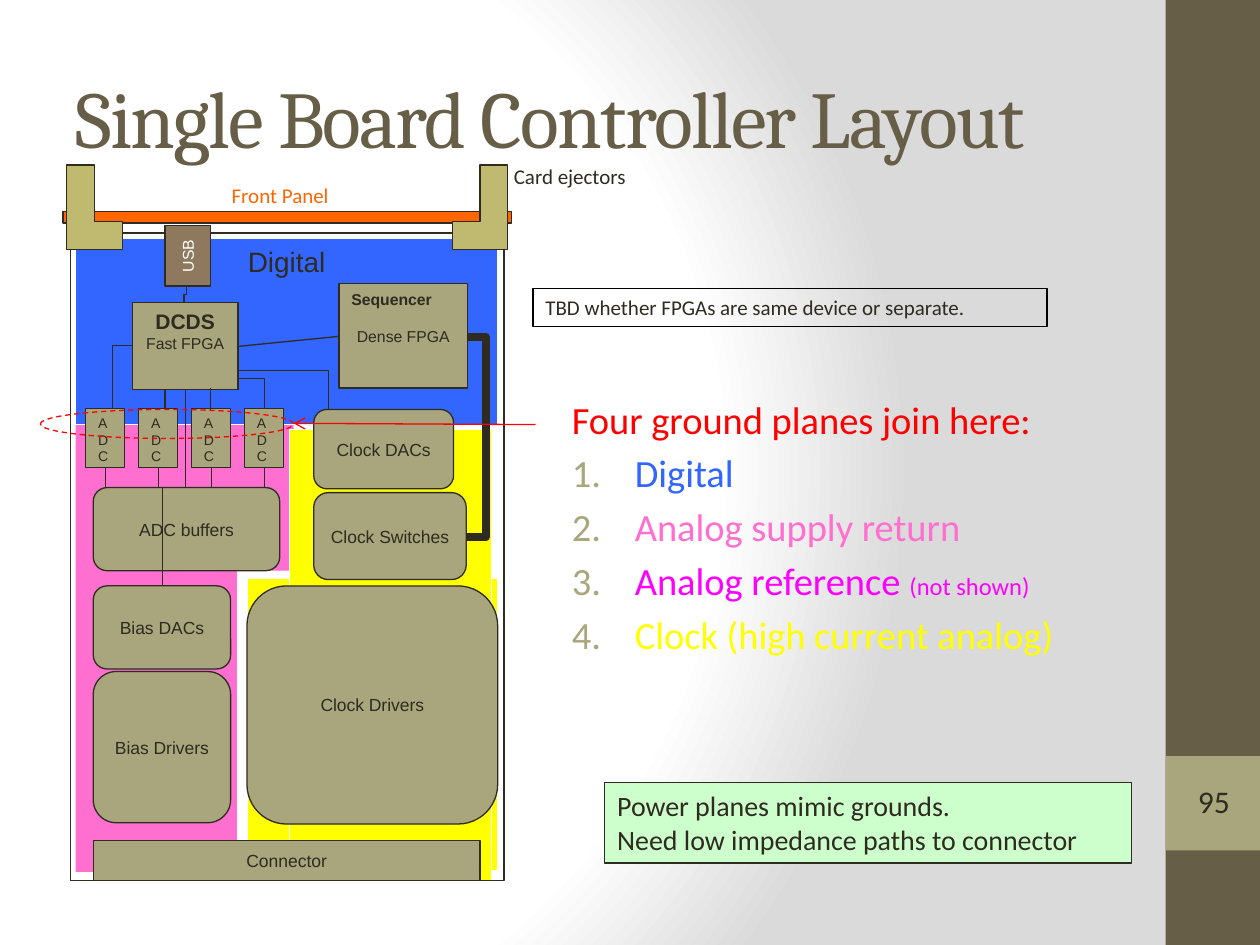
"""Build the single board controller layout slide on a grid of 1000 columns by 750 rows."""
from lxml.etree import SubElement
from pptx import Presentation
from pptx.dml.color import RGBColor
from pptx.enum.dml import MSO_LINE
from pptx.enum.shapes import MSO_CONNECTOR, MSO_SHAPE
from pptx.enum.text import MSO_ANCHOR, PP_ALIGN
from pptx.oxml import parse_xml
from pptx.oxml.ns import nsdecls, qn
from pptx.util import Inches, Pt

INK, OLIVE, KHAKI, BROWN = "2F2B20", "A9A57C", "C0BA71", "675E47"
RED, BLUE, PINK, YELLOW, ORANGE, WHITE = "FF0000", "3366FF", "FF6FCF", "FFFF00", "FF6600", "FFFFFF"
TOP, MIDDLE = MSO_ANCHOR.TOP, MSO_ANCHOR.MIDDLE
LEFT, CENTER = PP_ALIGN.LEFT, PP_ALIGN.CENTER
RECTANGLE, ROUNDED = MSO_SHAPE.RECTANGLE, MSO_SHAPE.ROUNDED_RECTANGLE

presentation = Presentation()
presentation.slide_width, presentation.slide_height = Inches(10), Inches(7.5)
cell = presentation.slide_width // 1000
slide = presentation.slides.add_slide(presentation.slide_layouts[6])


def add_block(shapes, kind, box, fill=None, line=None):
    shape = shapes.add_shape(kind, *[cell * length for length in box])
    shape.shadow.inherit = False
    if fill:
        shape.fill.solid()
        shape.fill.fore_color.rgb = RGBColor.from_string(fill)
    else:
        shape.fill.background()
    if line:
        shape.line.color.rgb = RGBColor.from_string(line)
        shape.line.width = Pt(0.75)
    else:
        shape.line.fill.background()
    return shape


def write(shape, text, size, color=INK, font="Calibri", align=LEFT, anchor=TOP):
    frame = shape.text_frame
    frame.text = text
    frame.word_wrap = True
    frame.vertical_anchor = anchor
    for paragraph in frame.paragraphs:
        paragraph.alignment = align
        paragraph.font.size = Pt(size)
        paragraph.font.name = font
        paragraph.font.color.rgb = RGBColor.from_string(color)
    return frame


slide.background.fill.solid()
solid = slide.background.fill._xPr.find(qn("a:solidFill"))
stops = "".join(
    f'<a:gs pos="{share * 1000}"><a:srgbClr val="{color}"/></a:gs>'
    for share, color in [(0, WHITE), (75, WHITE), (100, "DADADA")]
)
solid.getparent().replace(solid, parse_xml(
    f'<a:gradFill {nsdecls("a")} rotWithShape="1"><a:gsLst>{stops}</a:gsLst><a:path path="circle">'
    '<a:fillToRect l="20000" t="50000" r="100000" b="50000"/></a:path></a:gradFill>'
))

add_block(slide.shapes, RECTANGLE, (925, 0, 75, 750), BROWN)
add_block(slide.shapes, RECTANGLE, (925, 600, 75, 75), OLIVE)

board = slide.shapes.add_group_shape().shapes
for box, fill, line in [
    ((196, 459, 199, 232), YELLOW, WHITE),
    ((99, 337, 134, 116), PINK, None),
    ((230, 341, 160, 358), YELLOW, WHITE),
    ((60, 337, 128, 355), PINK, None),
    ((56, 185, 344, 514), None, INK),
]:
    add_block(board, RECTANGLE, box, fill, line)

digital = add_block(board, RECTANGLE, (60, 189, 335, 148), BLUE, WHITE)
write(digital, "Digital", 16, font="Arial", align=CENTER)

dcds = add_block(board, RECTANGLE, (105, 240, 84, 69), OLIVE, INK)
paragraph = write(dcds, "DCDS ", 9, font="Arial", align=CENTER).paragraphs[0]
paragraph.runs[0].font.size = Pt(12)
paragraph.runs[0].font.bold = True
paragraph.add_run().text = "Fast FPGA"

sequencer = add_block(board, RECTANGLE, (269, 225, 102, 83), OLIVE, INK)
heading, detail = write(sequencer, "Sequencer\nDense FPGA", 9, font="Arial").paragraphs
heading.font.bold = True
detail.alignment = CENTER
detail.space_before = Pt(10.5)

converters = [68 + 42 * index for index in range(4)]
for left in converters:
    write(add_block(board, RECTANGLE, (left, 324, 31, 47), OLIVE, INK), "ADC", 8, font="Arial")

for name, kind, box in [
    ("ADC buffers", ROUNDED, (74, 387, 148, 66)),
    ("Bias DACs", ROUNDED, (74, 465, 109, 66)),
    ("Connector", RECTANGLE, (74, 667, 307, 32)),
    ("Clock DACs", ROUNDED, (249, 325, 111, 63)),
    ("Clock Drivers", ROUNDED, (196, 465, 199, 189)),
    ("Clock Switches", ROUNDED, (249, 391, 121, 69)),
    ("Bias Drivers", ROUNDED, (74, 533, 109, 120)),
]:
    write(add_block(board, kind, box, OLIVE, INK), name, 10, font="Arial", align=CENTER, anchor=MIDDLE)

wires = [((left + 16, 387, left + 16, 371), 0, "line", []) for left in converters]
wires += [
    ((131, 324, 131, 309), 0, "line", []),
    ((167, 325, 167, 308), 0, "line", []),
    ((188, 275, 269, 267), 0, "line", []),
    ((141, 233, 153, 235), 90, "bentConnector3", []),
    ((122, 307, 72, 292), 90, "bentConnector2", []),
    ((184, 319, 215, 298), 270, "bentConnector3", [0.77]),
    ((216, 396, 60, 378), 90, "bentConnector3", [0.5]),
    ((450, 348, 291, 346), 90, "bentConnector4", [0, 8]),
    ((188, 294, 269, 325), 0, "bentConnector3", [0.9]),
    ((425, 337, 233, 336), 0, "line", []),
]
for ends, turn, preset, bends in wires:
    pointer = ends[0] == 425
    wire = (slide.shapes if pointer else board).add_connector(
        MSO_CONNECTOR.STRAIGHT, *[cell * length for length in ends]
    )
    wire.line.color.rgb = RGBColor.from_string(RED if pointer else INK)
    wire.line.width = Pt(4.5 if preset == "bentConnector4" else 0.75)
    properties = wire.element.spPr
    properties.find(qn("a:xfrm")).set("rot", str(turn * 60000))
    geometry = properties.find(qn("a:prstGeom"))
    geometry.set("prst", preset)
    for number, bend in enumerate(bends, 1):
        SubElement(geometry.find(qn("a:avLst")), qn("a:gd"), name=f"adj{number}", fmla=f"val {round(bend * 100000)}")
    if pointer:
        SubElement(properties.find(qn("a:ln")), qn("a:tailEnd"), type="arrow")
    SubElement(properties, qn("a:effectLst"))

junction = add_block(board, MSO_SHAPE.OVAL, (32, 325, 201, 23), None, RED)
junction.line.dash_style = MSO_LINE.DASH

labels = {}
for text, box, size, color, font, anchor in [
    ("Single Board Controller Layout", (50, 30, 833, 125), 46, BROWN, "Cambria", MIDDLE),
    ("Card ejectors", (398, 125, 206, 30), 12, INK, "Calibri", TOP),
    ("Front Panel", (174, 140, 206, 30), 12, ORANGE, "Calibri", TOP),
    ("95", (941, 616, 46, 40), 18, INK, "Calibri", TOP),
]:
    label = slide.shapes.add_textbox(*[cell * length for length in box])
    labels[text] = write(label, text, size, color, font, anchor=anchor)
title = labels["Single Board Controller Layout"].paragraphs[0]
title.runs[0].font._element.set("spc", "-100")

planes = slide.shapes.add_textbox(*[cell * length for length in (444, 309, 506, 357)]).text_frame
planes.word_wrap = True
for index, (text, color) in enumerate([
    ("Four ground planes join here:", RED),
    ("Digital", BLUE),
    ("Analog supply return", PINK),
    ("Analog reference ", "FF00FF"),
    ("Clock (high current analog)", YELLOW),
]):
    paragraph = planes.add_paragraph() if index else planes.paragraphs[0]
    paragraph.add_run().text = text
    if index:
        properties = paragraph._p.get_or_add_pPr()
        properties.set("marL", str(Inches(0.5)))
        properties.set("indent", str(-Inches(0.5)))
        SubElement(SubElement(properties, qn("a:buClr")), qn("a:srgbClr"), val=OLIVE)
        SubElement(properties, qn("a:buAutoNum"), type="arabicPeriod")
        paragraph.space_before = Pt(4.4)
    paragraph.font.size = Pt(22)
    paragraph.font.name = "Calibri"
    paragraph.font.color.rgb = RGBColor.from_string(color)
remark = planes.paragraphs[3].add_run()
remark.text = "(not shown)"
remark.font.size = Pt(14)

add_block(slide.shapes, RECTANGLE, (50, 168, 356, 9), ORANGE, INK)
usb = add_block(slide.shapes, RECTANGLE, (131, 179, 36, 48), "8E795E", INK)
frame = write(usb, "USB", 9, WHITE, "Arial", CENTER, MIDDLE)
frame._txBody.bodyPr.set("vert", "vert270")

for left, flipped in [(53, "0"), (359, "1")]:
    ejector = add_block(slide.shapes, RECTANGLE, (left, 131, 44, 67), KHAKI, INK)
    properties = ejector.element.spPr
    properties.find(qn("a:prstGeom")).set("prst", "corner")
    properties.find(qn("a:xfrm")).set("flipH", flipped)

for text, box, size, fill, line in [
    ("Power planes mimic grounds.\nNeed low impedance paths to connector", (480, 621, 418, 64), 16, "CCFFCC", INK),
    ("TBD whether FPGAs are same device or separate.", (423, 229, 408, 30), 12, None, "000000"),
]:
    write(add_block(slide.shapes, RECTANGLE, box, fill, line), text, size)

presentation.save("out.pptx")
